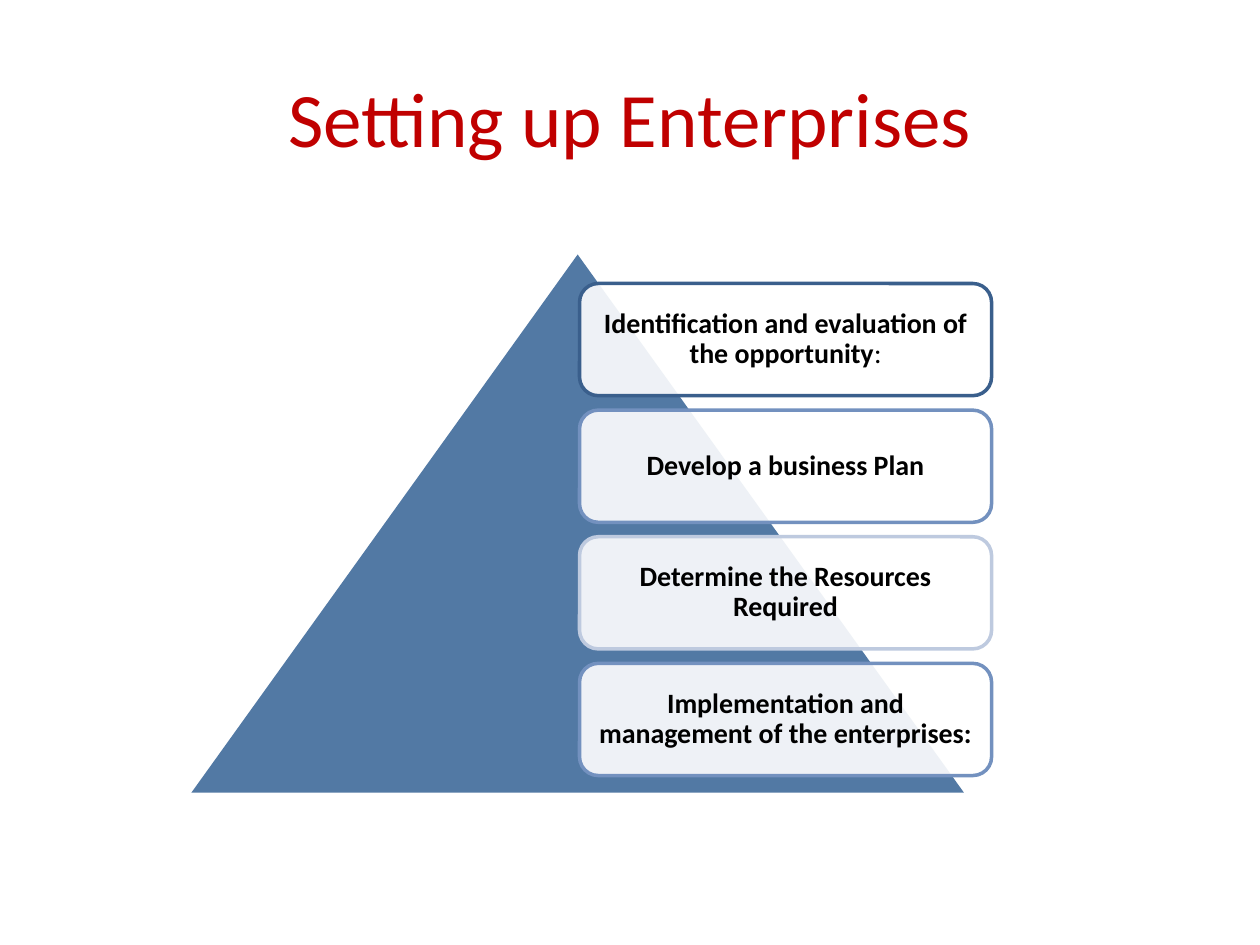
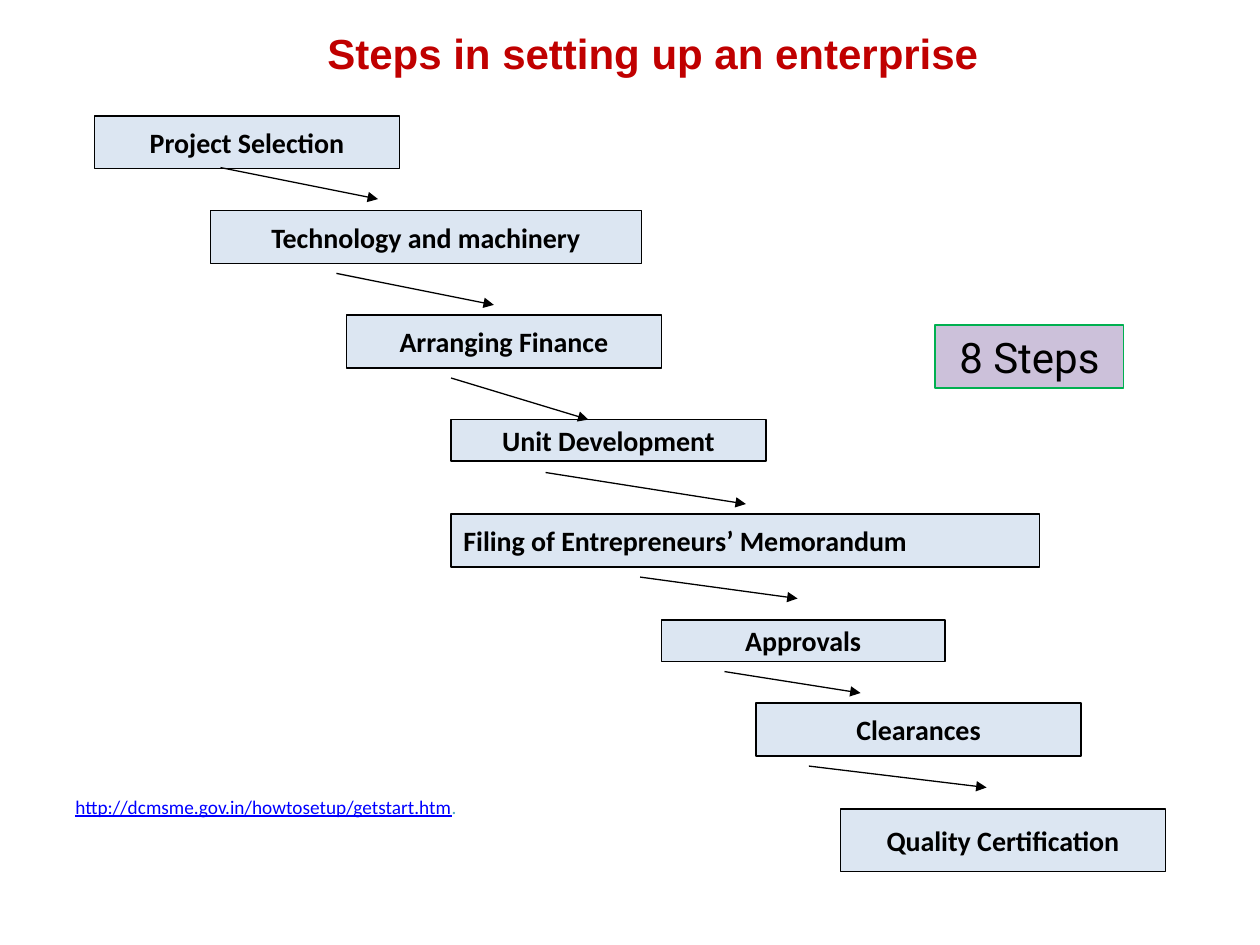
import pptx
import pptx.util
import pptx.dml.color
import pptx.enum.shapes
import pptx.enum.text
import pptx.oxml
import pptx.oxml.ns
import lxml.etree

Inches = pptx.util.Inches
Pt = pptx.util.Pt
RGBColor = pptx.dml.color.RGBColor
MSO_SHAPE = pptx.enum.shapes.MSO_SHAPE
PP_ALIGN = pptx.enum.text.PP_ALIGN
MSO_ANCHOR = pptx.enum.text.MSO_ANCHOR

RED = RGBColor(0xC0, 0x00, 0x00)
BLACK = RGBColor(0x00, 0x00, 0x00)
WHITE = RGBColor(0xFF, 0xFF, 0xFF)
PYRAMID_BLUE = RGBColor(0x52, 0x79, 0xA4)
DARK_BLUE = RGBColor(0x3A, 0x5F, 0x8C)
MID_BLUE = RGBColor(0x73, 0x91, 0xBF)
PALE_BLUE = RGBColor(0xBE, 0xCA, 0xDF)
STEP_BLUE = RGBColor(0xDC, 0xE6, 0xF2)
LILAC = RGBColor(0xCC, 0xC1, 0xDA)
GREEN = RGBColor(0x00, 0xB0, 0x50)
LINK_BLUE = RGBColor(0x00, 0x00, 0xFF)
LINK_DOT = RGBColor(0x4B, 0xAC, 0xC6)


def add_block(slide, kind, place, fill, line=None, line_width=0.75):
    """Add a filled shape, or a plain text box when kind is None."""
    box = [Inches(value) for value in place]
    if kind is None:
        return slide.shapes.add_textbox(*box)
    shape = slide.shapes.add_shape(kind, *box)
    shape.shadow.inherit = False
    shape.fill.solid()
    shape.fill.fore_color.rgb = fill
    if line is None:
        shape.line.fill.background()
    else:
        shape.line.color.rgb = line
        shape.line.width = Pt(line_width)
    return shape


def write(shape, text, size, font="Calibri", color=BLACK, bold=False,
          align=PP_ALIGN.CENTER, anchor=MSO_ANCHOR.MIDDLE):
    """Put one formatted paragraph into a shape and return the paragraph."""
    frame = shape.text_frame
    frame.text = text
    frame.word_wrap = True
    frame.vertical_anchor = anchor
    paragraph = frame.paragraphs[0]
    paragraph.alignment = align
    run = paragraph.runs[0]
    run.font.size = Pt(size)
    run.font.name = font
    run.font.bold = bold
    run.font.color.rgb = color
    return paragraph


presentation = pptx.Presentation()
presentation.slide_width = Inches(10)
presentation.slide_height = Inches(7.5)
blank_layout = presentation.slide_layouts[6]

# Slide 1: title and pyramid
slide = presentation.slides.add_slide(blank_layout)
title = add_block(slide, None, (0.5, 0.3, 9, 1.25), None)
write(title, "Setting up Enterprises", 44, color=RED)
add_block(slide, MSO_SHAPE.ISOSCELES_TRIANGLE, (1.52, 2.02, 6.13, 4.27), PYRAMID_BLUE)

# Four translucent cards stacked over the pyramid
cards = [
    ("Identification and evaluation of the opportunity", DARK_BLUE),
    ("Develop a business Plan", MID_BLUE),
    ("Determine the Resources Required", PALE_BLUE),
    ("Implementation and management of the enterprises:", MID_BLUE),
]
for index, (text, outline) in enumerate(cards):
    place = (4.6, 2.25 + index * 1.005, 3.27, 0.89)
    card = add_block(slide, MSO_SHAPE.ROUNDED_RECTANGLE, place, WHITE, outline, 2)
    color_element = card.fill._xPr.find(".//" + pptx.oxml.ns.qn("a:srgbClr"))
    lxml.etree.SubElement(color_element, pptx.oxml.ns.qn("a:alpha"), val="90000")
    paragraph = write(card, text, 16, bold=True)
    paragraph.line_spacing = 0.9
    frame = card.text_frame
    frame.margin_left = frame.margin_right = Inches(0.11)
    frame.margin_top = frame.margin_bottom = Inches(0.11)
    if index == 0:
        colon = paragraph.add_run()
        colon.text = ":"
        colon.font.size = Pt(16)
        colon.font.name = "Calibri"
        colon.font.color.rgb = BLACK

# Slide 2: title and step count
slide = presentation.slides.add_slide(blank_layout)
title = add_block(slide, None, (2.5, 0.17, 5.53, 0.51), None)
write(title, "Steps in setting up an enterprise", 24, "Arial", RED, True,
      PP_ALIGN.LEFT, MSO_ANCHOR.TOP)
count = add_block(slide, MSO_SHAPE.RECTANGLE, (7.42, 2.58, 1.5, 0.5), LILAC, GREEN)
write(count, "8 Steps", 24, "Roboto", anchor=MSO_ANCHOR.TOP)

# Staircase of steps
steps = [
    ("Project Selection", 0.75, 0.92, 2.42, 0.42),
    ("Technology and machinery", 1.67, 1.67, 3.42, 0.42),
    ("Arranging Finance", 2.75, 2.5, 2.5, 0.42),
    ("Unit Development", 3.58, 3.33, 2.5, 0.33),
    ("Filing of Entrepreneurs’ Memorandum", 3.58, 4.08, 4.67, 0.42),
    ("Approvals", 5.25, 4.92, 2.25, 0.33),
    ("Clearances", 6, 5.58, 2.58, 0.42),
    ("Quality Certification", 6.67, 6.42, 2.58, 0.5),
]
for text, *place in steps:
    step = add_block(slide, MSO_SHAPE.RECTANGLE, place, STEP_BLUE, BLACK)
    align = PP_ALIGN.LEFT if text.startswith("Filing") else PP_ALIGN.CENTER
    write(step, text, 16, bold=True, align=align)

# Arrows from each step to the next
arrows = [
    (1.75, 1.33, 3, 1.58),
    (2.67, 2.17, 3.92, 2.42),
    (3.58, 3, 4.67, 3.33),
    (4.33, 3.75, 5.92, 4),
    (5.08, 4.58, 6.33, 4.75),
    (5.75, 5.33, 6.83, 5.5),
    (6.42, 6.08, 7.83, 6.25),
]
for ends in arrows:
    arrow = slide.shapes.add_connector(
        pptx.enum.shapes.MSO_CONNECTOR.STRAIGHT, *[Inches(value) for value in ends])
    arrow.line.color.rgb = BLACK
    arrow.line.width = Pt(0.75)
    lxml.etree.SubElement(arrow.line._get_or_add_ln(),
                          pptx.oxml.ns.qn("a:tailEnd"), type="triangle")
    lxml.etree.SubElement(arrow._element.spPr, pptx.oxml.ns.qn("a:effectLst"))

# Web address
address = add_block(slide, None, (0.5, 6.25, 4, 0.3), None)
paragraph = write(address, "http://dcmsme.gov.in/howtosetup/getstart.htm", 11,
                  color=LINK_BLUE, align=PP_ALIGN.LEFT)
paragraph.runs[0].font.underline = True
full_stop = paragraph.add_run()
full_stop.text = "."
full_stop.font.size = Pt(11)
full_stop.font.name = "Calibri"
full_stop.font.color.rgb = LINK_DOT

presentation.save("out.pptx")
